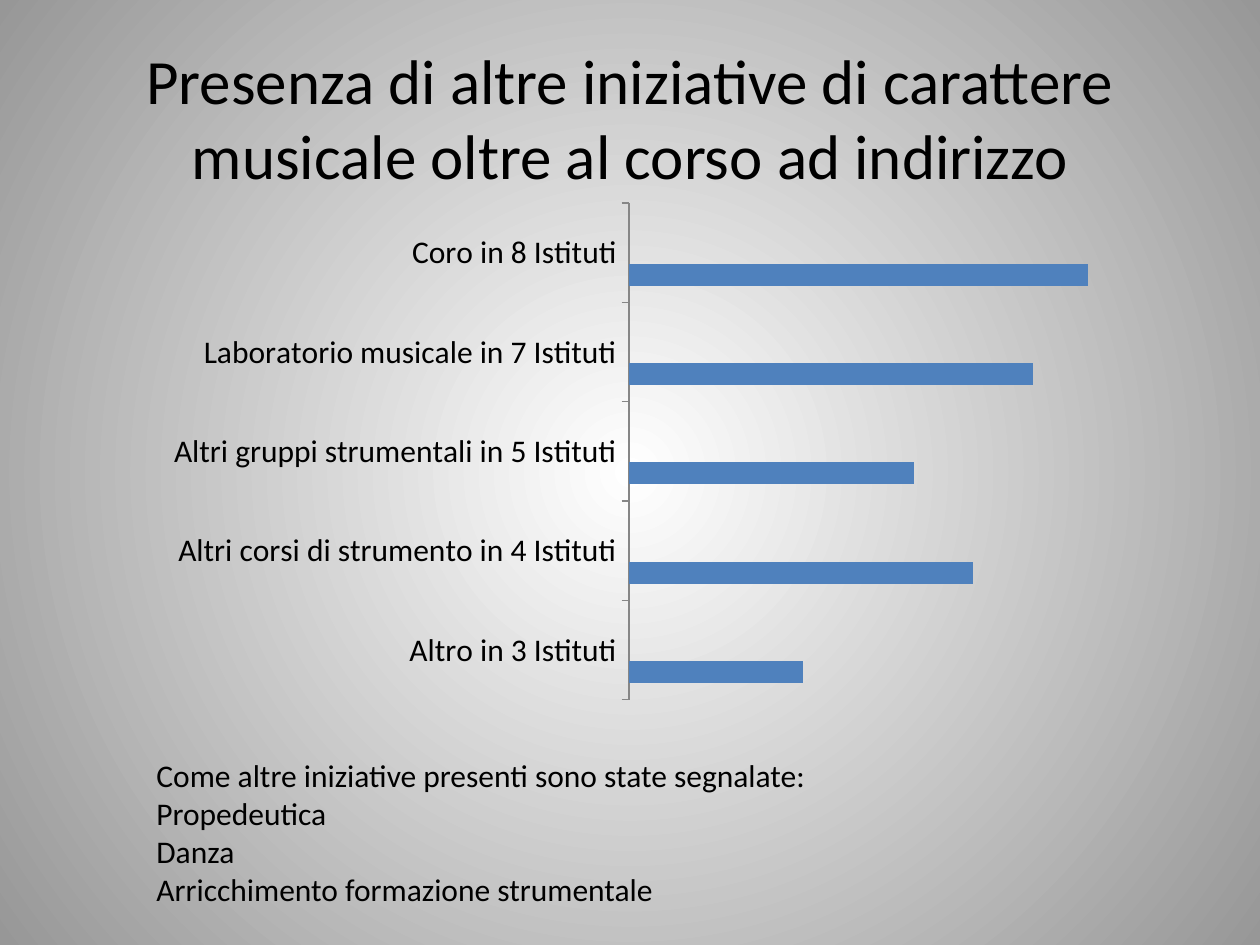
from typing import NamedTuple, Optional

from lxml import etree
from pptx import Presentation
from pptx import util as u
from pptx.chart.data import CategoryChartData
from pptx.dml.color import RGBColor
from pptx.enum import chart as ch, text
from pptx.oxml.ns import qn

EMU_PER_PX = 914400 / 126
FONT = "Calibri"
BLACK = "000000"


class Box(NamedTuple):
    left: int
    top: int
    width: int
    height: int

    def emu(self) -> list[int]:
        return [px(side) for side in self]


class Initiative(NamedTuple):
    label: str
    share: int


class Series(NamedTuple):
    name: str
    color: str
    values: list[Optional[int]]


TITLE_BOX = Box(63, 38, 1134, 158)
CHART_BOX = Box(154, 193, 1012, 518)
PLOT_BOX = Box(629, 203, 459, 497)
NOTE_BOX = Box(144, 750, 687, 165)

INITIATIVES = [
    Initiative("Altro in 3 Istituti", 38),
    Initiative("Altri corsi di strumento in 4 Istituti", 75),
    Initiative("Altri gruppi strumentali in 5 Istituti", 62),
    Initiative("Laboratorio musicale in 7 Istituti", 88),
    Initiative("Coro in 8 Istituti", 100),
]
NO_VALUES = [None] * len(INITIATIVES)
SERIES = [
    Series("Series 1", "4F81BD", [item.share for item in INITIATIVES]),
    Series("Series 2", "C0504D", NO_VALUES),
    Series("Series 3", "9BBB59", NO_VALUES),
]
NOTE_LINES = [
    "Come altre iniziative presenti sono state segnalate:",
    "Propedeutica",
    "Danza",
    "Arricchimento formazione strumentale",
]


def px(length: int) -> int:
    return round(length * EMU_PER_PX)


def rgb(color: str) -> RGBColor:
    return RGBColor.from_string(color)


def style_font(font, size: int) -> None:
    font.name = FONT
    font.size = u.Pt(size)
    font.color.rgb = rgb(BLACK)


def add_run(paragraph, words: str, size: int) -> None:
    run = paragraph.add_run()
    run.text = words
    style_font(run.font, size)


def paint_background(slide, center: str, edge: str) -> None:
    fill = slide.background.fill
    fill.gradient()
    for stop, color in zip(fill.gradient_stops, (center, edge)):
        stop.color.rgb = rgb(color)
    # Turn the linear gradient into a circular one
    gradient = slide.element.find(".//" + qn("a:gradFill"))
    gradient.remove(gradient.find(qn("a:lin")))
    circle = etree.SubElement(gradient, qn("a:path"), path="circle")
    etree.SubElement(circle, qn("a:fillToRect"),
                     {side: "50000" for side in "ltrb"})


def fill_title(title, words: str) -> None:
    title.left, title.top, title.width, title.height = TITLE_BOX.emu()
    frame = title.text_frame
    frame.vertical_anchor = text.MSO_ANCHOR.MIDDLE
    frame.paragraphs[0].alignment = text.PP_ALIGN.CENTER
    add_run(frame.paragraphs[0], words, 36)


def place_plot(chart, plot: Box, frame: Box) -> None:
    """Fix the inner plot area as fractions of the chart frame."""
    area = chart.element.find(".//" + qn("c:plotArea"))
    layout = area.find(qn("c:layout"))
    if layout is None:
        layout = etree.Element(qn("c:layout"))
        area.insert(0, layout)
    manual = etree.SubElement(layout, qn("c:manualLayout"))
    settings = {
        "layoutTarget": "inner", "xMode": "edge", "yMode": "edge",
        "x": round((plot.left - frame.left) / frame.width, 4),
        "y": round((plot.top - frame.top) / frame.height, 4),
        "w": round(plot.width / frame.width, 4),
        "h": round(plot.height / frame.height, 4),
    }
    for tag, value in settings.items():
        etree.SubElement(manual, qn(f"c:{tag}"), val=str(value))


def add_initiatives_chart(slide) -> None:
    data = CategoryChartData()
    data.categories = [item.label for item in INITIATIVES]
    for series in SERIES:
        data.add_series(series.name, series.values)
    chart = slide.shapes.add_chart(
        ch.XL_CHART_TYPE.BAR_CLUSTERED, *CHART_BOX.emu(), data).chart
    chart.has_legend = False
    chart.has_title = False
    style_font(chart.font, 18)

    bars = chart.plots[0]
    bars.gap_width = 150
    bars.vary_by_categories = False
    for drawn, series in zip(bars.series, SERIES):
        drawn.format.fill.solid()
        drawn.format.fill.fore_color.rgb = rgb(series.color)

    labels = chart.category_axis
    labels.has_major_gridlines = False
    labels.major_tick_mark = ch.XL_TICK_MARK.OUTSIDE
    labels.format.line.color.rgb = rgb("868686")
    shares = chart.value_axis
    shares.has_major_gridlines = False
    shares.minimum_scale, shares.maximum_scale = 0, 100
    shares.visible = False
    place_plot(chart, PLOT_BOX, CHART_BOX)


def add_note(slide) -> None:
    frame = slide.shapes.add_textbox(*NOTE_BOX.emu()).text_frame
    frame.word_wrap = False
    frame.auto_size = text.MSO_AUTO_SIZE.SHAPE_TO_FIT_TEXT
    for number, line in enumerate(NOTE_LINES):
        paragraph = frame.add_paragraph() if number else frame.paragraphs[0]
        add_run(paragraph, line, 18)


def main() -> None:
    deck = Presentation()
    deck.slide_width, deck.slide_height = u.Inches(10), u.Inches(7.5)
    slide = deck.slides.add_slide(deck.slide_layouts[5])  # title only

    paint_background(slide, "FFFFFF", "979797")
    fill_title(slide.shapes.title, "Presenza di altre iniziative di carattere "
                                   "musicale oltre al corso ad indirizzo")
    add_initiatives_chart(slide)
    add_note(slide)
    deck.save("out.pptx")


if __name__ == "__main__":
    main()
